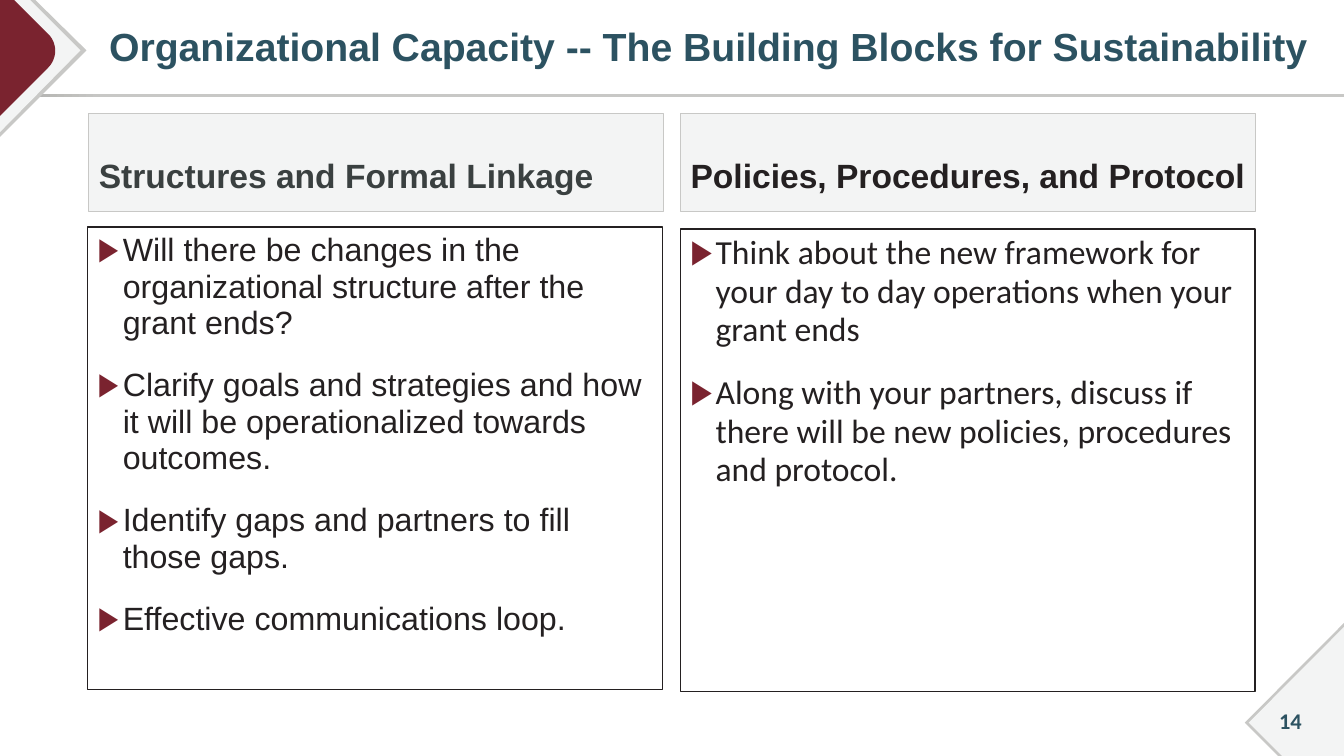
from lxml.etree import SubElement
from pptx import Presentation
from pptx.dml.color import RGBColor
from pptx.enum.shapes import MSO_SHAPE
from pptx.enum.text import MSO_ANCHOR, MSO_AUTO_SIZE, PP_ALIGN
from pptx.oxml.ns import qn
from pptx.util import Cm, Pt

TEAL = RGBColor(0x2C, 0x52, 0x61)
WINE = RGBColor(0x7A, 0x23, 0x2F)
INK = RGBColor(0x24, 0x20, 0x21)
SLATE = RGBColor(0x3A, 0x40, 0x40)
PALE = RGBColor(0xF3, 0xF4, 0xF4)
GREY = RGBColor(0xC8, 0xC8, 0xC6)
DARK = RGBColor(0xAB, 0xAB, 0xA8)
WIDE, HIGH = 33.87, 19.05


class Page:
    """Holds the style and the current slide; all lengths are in cm."""

    def __init__(self, deck):
        self.slide = deck.slides.add_slide(deck.slide_layouts[5])
        self.shapes = self.slide.shapes

    def label(self, para, text, size, color, font="Arial", bold=False):
        run = para.add_run()
        run.text = text
        run.font.size, run.font.name, run.font.bold = Pt(size), font, bold
        run.font.color.rgb = color

    def frame(self, shape, pad=(0.25, 0.13, 0.25, 0.13), anchor=MSO_ANCHOR.MIDDLE):
        frame = shape.text_frame
        frame.word_wrap, frame.auto_size = True, MSO_AUTO_SIZE.NONE
        frame.vertical_anchor = anchor
        (frame.margin_left, frame.margin_top,
         frame.margin_right, frame.margin_bottom) = map(Cm, pad)
        return frame

    def title(self, text, *box):
        shape = self.shapes.title
        shape.left, shape.top, shape.width, shape.height = map(Cm, box)
        para = self.frame(shape, (0.51, 0.13, 0.25, 0.13)).paragraphs[0]
        para.alignment, para.line_spacing = PP_ALIGN.LEFT, 0.9
        self.label(para, text, 28, TEAL, bold=True)

    def rect(self, box, fill=None, line=None, weight=1):
        shape = self.shapes.add_shape(MSO_SHAPE.RECTANGLE, *map(Cm, box))
        shape.shadow.inherit = False
        if fill is None:
            shape.fill.background()
        else:
            shape.fill.solid()
            shape.fill.fore_color.rgb = fill
        if line is None:
            shape.line.fill.background()
        else:
            shape.line.color.rgb, shape.line.width = line, Pt(weight)
        return shape

    def rule(self, *box):
        fill = self.rect(box).fill
        fill.gradient()
        fill.gradient_angle = 0
        for stop, color, place in zip(fill.gradient_stops, (DARK, GREY), (0, 0.08)):
            stop.color.rgb, stop.position = color, place

    def patch(self, points, fill):
        first, *rest = [(Cm(x), Cm(y)) for x, y in points]
        pen = self.shapes.build_freeform(*first)
        pen.add_line_segments(rest, close=True)
        shape = pen.convert_to_shape()
        shape.shadow.inherit = False
        shape.fill.solid()
        shape.fill.fore_color.rgb = fill
        shape.line.fill.background()

    def number(self, text, *box):
        para = self.frame(self.shapes.add_textbox(*map(Cm, box))).paragraphs[0]
        para.alignment = PP_ALIGN.CENTER
        self.label(para, text, 16, TEAL, "Calibri", True)

    def head(self, text, box, color, align):
        shape = self.rect(box, PALE, GREY, 0.75)
        para = self.frame(shape, (0.25, 0.86, 0.25, 0)).paragraphs[0]
        para.alignment, para.line_spacing = align, 0.75
        self.label(para, text, 24, color, bold=True)

    def bullets(self, items, box, size, font):
        frame = self.frame(self.rect(box, line=INK), anchor=MSO_ANCHOR.TOP)
        for i, item in enumerate(items):
            para = frame.add_paragraph() if i else frame.paragraphs[0]
            para.alignment, para.line_spacing = PP_ALIGN.LEFT, 0.95
            para.space_before = Pt(18 if i else 0)
            props = para._p.get_or_add_pPr()
            props.set("marL", str(Cm(0.635)))
            props.set("indent", str(-Cm(0.635)))
            tint = SubElement(props, qn("a:buClr"))
            SubElement(tint, qn("a:srgbClr"), val=str(WINE))
            SubElement(props, qn("a:buFont"), typeface="Arial")
            SubElement(props, qn("a:buChar"), char="▶")
            self.label(para, item, size, INK, font)


def curve(a, b, c, d, steps=12):
    """Points along a cubic curve."""
    for t in (i / steps for i in range(steps + 1)):
        u = 1 - t
        yield tuple(u**3 * p + 3 * u * u * t * q + 3 * u * t * t * r + t**3 * s
                    for p, q, r, s in zip(a, b, c, d))


def main():
    deck = Presentation()
    deck.slide_width, deck.slide_height = Cm(WIDE), Cm(HIGH)
    page = Page(deck)

    # Rule and corner shapes
    page.rule(0, 2.36, WIDE, 0.08)
    for top, tip, low, fill in ((0.89, 2.18, 3.45, GREY), (0.76, 2.03, 3.33, PALE)):
        page.patch([(0, 0), (top, 0), (tip, 1.27), (0, low)], fill)
    bend = curve((1.22, 0.86), (1.45, 1.09), (1.45, 1.47), (1.22, 1.7))
    page.patch([(0, 0), (0.36, 0), *bend, (0, 2.92)], WINE)
    for top, foot, tip, fill in ((15.7, 32.21, 31.37, GREY), (15.8, 32.31, 31.47, PALE)):
        page.patch([(WIDE, top), (WIDE, HIGH), (foot, HIGH), (tip, 18.21)], fill)
    page.number("14", 31.62, 17.65, 1.8, 1.02)

    # Title
    page.title("Organizational Capacity -- The Building Blocks for Sustainability",
               2.24, 0.13, 31.62, 2.18)

    # Left column
    page.head("Structures and Formal Linkage", (2.24, 2.87, 14.48, 2.46),
              SLATE, PP_ALIGN.LEFT)
    page.bullets([
        "Will there be changes in the organizational structure after the grant ends?",
        "Clarify goals and strategies and how it will be operationalized towards outcomes.",
        "Identify gaps and partners to fill those gaps.",
        "Effective communications loop.",
    ], (2.21, 5.72, 14.48, 11.66), 23, "Arial")

    # Right column
    page.head("Policies, Procedures, and Protocol", (17.15, 2.87, 14.48, 2.46),
              INK, PP_ALIGN.CENTER)
    page.bullets([
        "Think about the new framework for your day to day operations when your grant ends",
        "Along with your partners, discuss if there will be new policies, "
        "procedures and protocol.",
    ], (17.15, 5.77, 14.48, 11.66), 24, "Calibri")

    deck.save("out.pptx")


if __name__ == "__main__":
    main()
